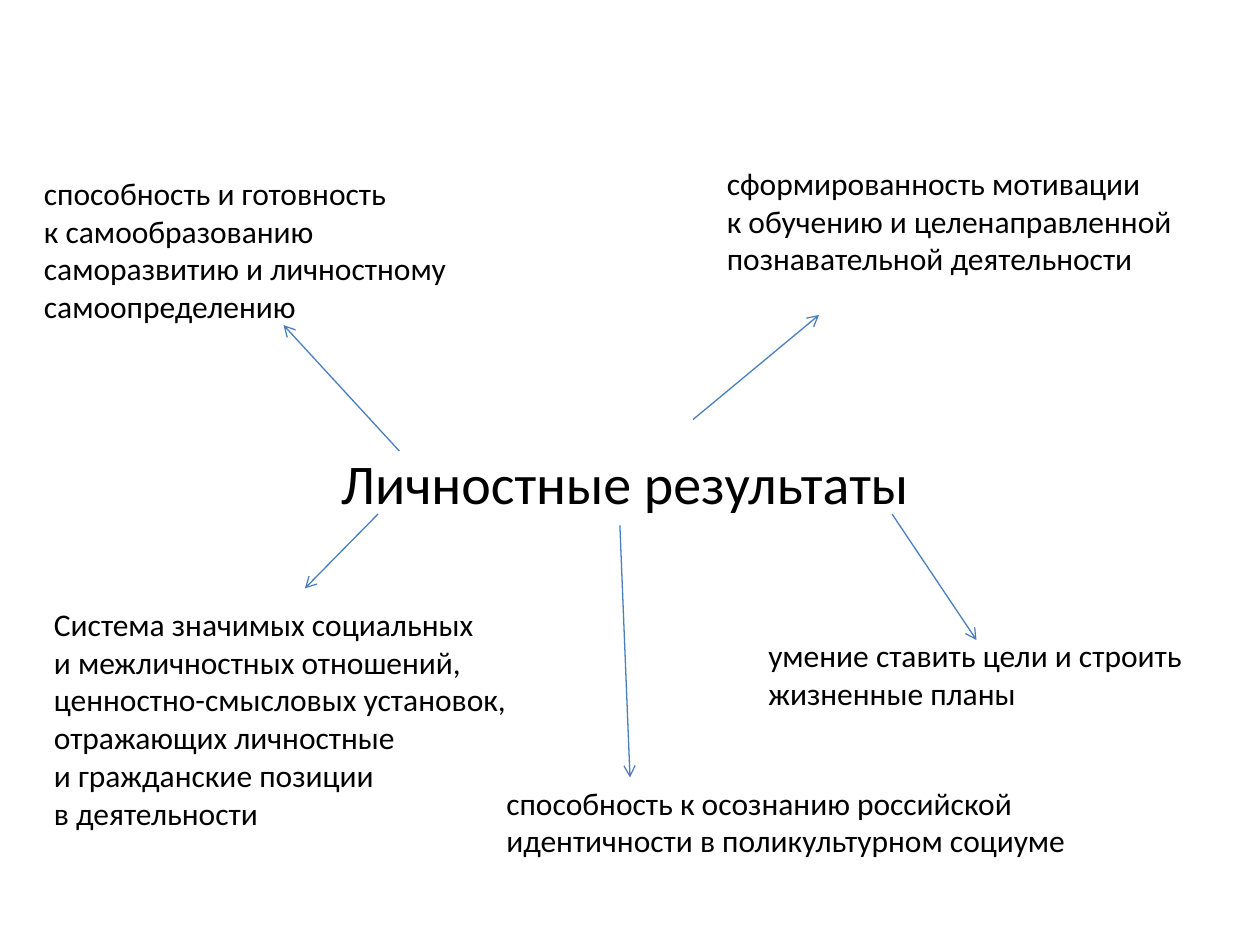
from lxml.etree import SubElement
from pptx import Presentation
from pptx.dml.color import RGBColor as Rgb
from pptx.enum.shapes import MSO_CONNECTOR as Link
from pptx.enum.text import MSO_ANCHOR as Anchor, PP_ALIGN as Align
from pptx.oxml.ns import qn
from pptx.util import Inches, Pt

THEME = {
    "font": "Calibri",
    "ink": Rgb(0, 0, 0),
    "line": Rgb(0x4B, 0x7E, 0xBC),
    "head": Pt(32),
    "body": Pt(18),
    "width": Pt(0.75),
}

# "~" marks a no-break space
HEAD = ("Личностные результаты", (0.25, 3.49, 9.42, 0.68))

# text, box (left, top, width, height), arrow start, arrow end
RESULTS = [
    ("способность и готовность к~самообразованию "
     "саморазвитию и~личностному самоопределению",
     (0.25, 1.33, 3.75, 1.31), (3.17, 3.58), (2.25, 2.58)),
    ("сформированность мотивации к~обучению и~целенаправленной "
     "познавательной деятельности",
     (5.67, 1.25, 3.83, 1.01), (5.5, 3.33), (6.5, 2.5)),
    ("Система значимых социальных и~межличностных отношений, "
     "ценностно-смысловых установок, отражающих личностные "
     "и~гражданские позиции в~деятельности",
     (0.33, 4.75, 4.17, 1.92), (3, 4.08), (2.42, 4.67)),
    ("умение ставить цели и~строить жизненные планы",
     (6, 5, 3.58, 0.71), (7.08, 4.08), (7.75, 5.08)),
    ("способность к~осознанию российской идентичности "
     "в~поликультурном социуме",
     (3.92, 6.17, 5, 0.71), (4.92, 4.17), (5, 6.17)),
]


def add_text(slide, text, box, size, align=Align.LEFT, anchor=Anchor.TOP):
    frame = slide.shapes.add_textbox(*map(Inches, box)).text_frame
    frame.word_wrap = True
    frame.vertical_anchor = anchor
    para = frame.paragraphs[0]
    para.text = text.replace("~", chr(160))
    para.alignment = align
    font = para.font
    font.name, font.size = THEME["font"], size
    font.color.rgb = THEME["ink"]


def add_arrow(slide, start, end):
    arrow = slide.shapes.add_connector(
        Link.STRAIGHT, *map(Inches, start + end))
    arrow.line.color.rgb = THEME["line"]
    arrow.line.width = THEME["width"]
    props = arrow.element.spPr
    SubElement(props.find(qn("a:ln")), qn("a:tailEnd"), type="arrow")
    SubElement(props, qn("a:effectLst"))


def main():
    deck = Presentation()
    deck.slide_width, deck.slide_height = Inches(10), Inches(7.5)
    slide = deck.slides.add_slide(deck.slide_layouts[6])
    add_text(slide, *HEAD, THEME["head"], Align.CENTER, Anchor.MIDDLE)
    for text, box, start, end in RESULTS:
        add_arrow(slide, start, end)
        add_text(slide, text, box, THEME["body"])
    deck.save("out.pptx")


if __name__ == "__main__":
    main()
